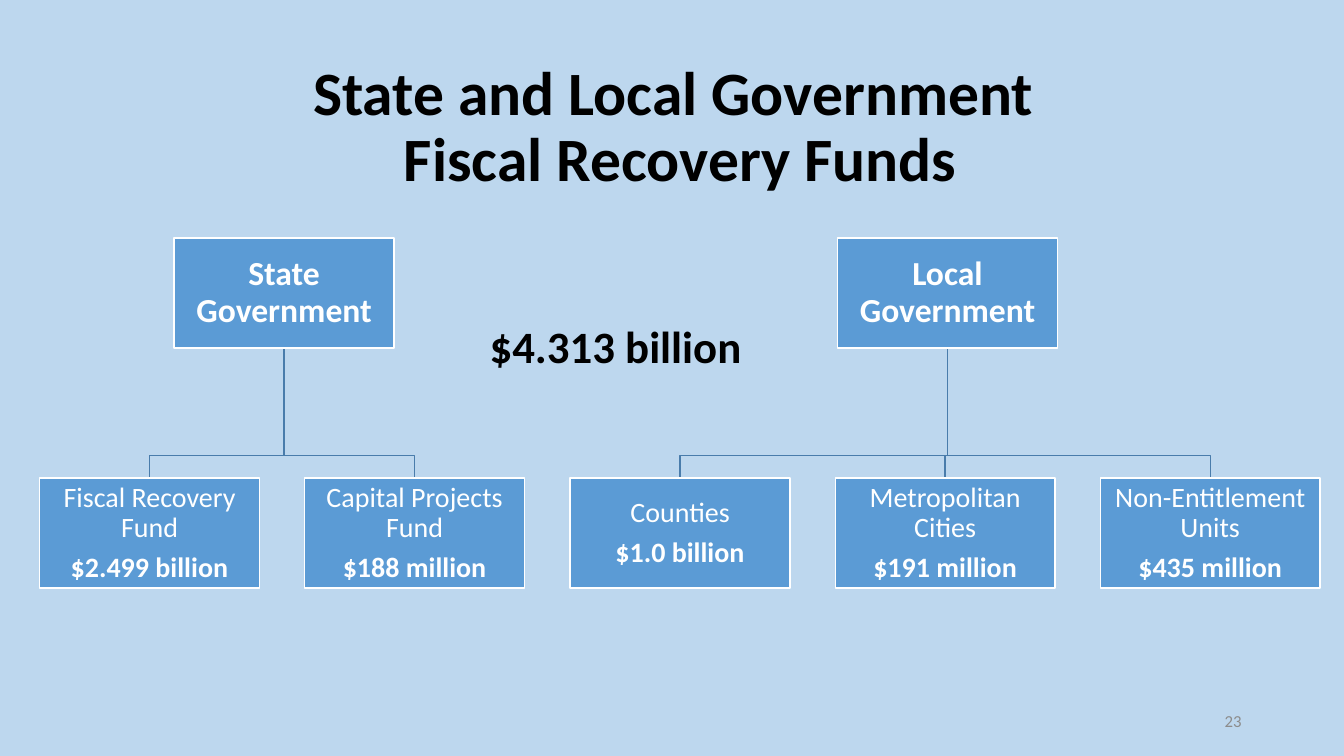
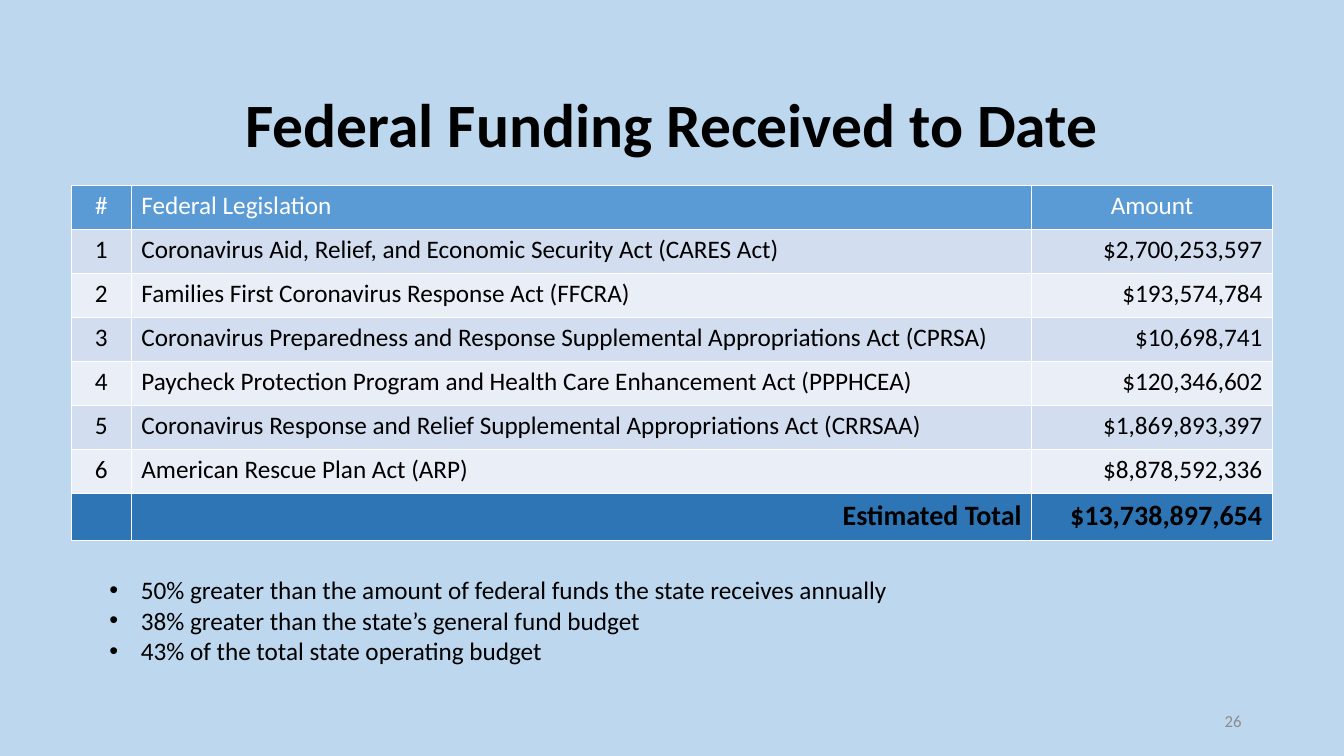
from lxml import etree
from pptx import Presentation
from pptx.dml.color import RGBColor
from pptx.enum.shapes import MSO_SHAPE
from pptx.enum.text import MSO_ANCHOR, PP_ALIGN
from pptx.oxml.ns import qn
from pptx.util import Cm, Pt

LEFT, CENTER, RIGHT = PP_ALIGN.LEFT, PP_ALIGN.CENTER, PP_ALIGN.RIGHT
TOP, MIDDLE = MSO_ANCHOR.TOP, MSO_ANCHOR.MIDDLE
RECT = MSO_SHAPE.RECTANGLE

FONT = "Calibri"
SKY, BLUE, DEEP_BLUE, LINE_BLUE = "BDD7EE", "5B9BD5", "2E75B6", "497CAB"
BAND_DARK, BAND_LIGHT = "D2DEEF", "EAEFF7"
WHITE, BLACK, GREY = "FFFFFF", "000000", "8C8C8C"

SLIDE_W, SLIDE_H = 33.87, 19.05
NUMBER_BOX = (23.92, 17.65, 7.62, 1.02)

# Organisation chart measures, in cm
NODE_W, NODE_H, NODE_PITCH = 5.54, 2.77, 6.68
ROOT_TO_CHILD, ROOT_TO_BUS = 6.05, 5.48

STATE_FUNDS = [
    ("Fiscal Recovery Fund", "$2.499 billion"),
    ("Capital Projects Fund", "$188 million"),
]
LOCAL_FUNDS = [
    ("Counties", "$1.0 billion"),
    ("Metropolitan Cities", "$191 million"),
    ("Non-Entitlement Units", "$435 million"),
]
LEGISLATION = [
    ("Coronavirus Aid, Relief, and Economic Security Act (CARES Act)", "$2,700,253,597"),
    ("Families First Coronavirus Response Act (FFCRA)", "$193,574,784"),
    ("Coronavirus Preparedness and Response Supplemental Appropriations Act (CPRSA)",
     "$10,698,741"),
    ("Paycheck Protection Program and Health Care Enhancement Act (PPPHCEA)",
     "$120,346,602"),
    ("Coronavirus Response and Relief Supplemental Appropriations Act (CRRSAA)",
     "$1,869,893,397"),
    ("American Rescue Plan Act (ARP)", "$8,878,592,336"),
]
FINDINGS = [
    "50% greater than the amount of federal funds the state receives annually",
    "38% greater than the state’s general fund budget",
    "43% of the total state operating budget",
]


def rgb(value):
    return RGBColor.from_string(value)


def cm_box(box):
    return [Cm(v) for v in box]


def set_attrs(obj, formats):
    for name, value in formats.items():
        setattr(obj, name, value)


def write(p, text, size, color=BLACK, bold=False, **formats):
    """Fill a paragraph; formats are paragraph attributes."""
    p.text = text
    set_attrs(p, formats)
    for r in p.runs:
        set_attrs(r.font, {"name": FONT, "size": Pt(size), "bold": bold})
        r.font.color.rgb = rgb(color)


def add_text(slide, box, anchor=TOP):
    tf = slide.shapes.add_textbox(*cm_box(box)).text_frame
    set_attrs(tf, {"word_wrap": True, "vertical_anchor": anchor})
    return tf


def add_title(slide, box, text):
    tf = add_text(slide, box, MIDDLE)
    write(tf.paragraphs[0], text, 44, bold=True, alignment=CENTER, line_spacing=0.9)


def new_slide(prs, number):
    slide = prs.slides.add_slide(prs.slide_layouts[6])
    tf = add_text(slide, NUMBER_BOX, MIDDLE)
    write(tf.paragraphs[0], number, 12, GREY, alignment=RIGHT)
    return slide


def set_outline(sp, color):
    sp.shadow.inherit = False
    sp.line.color.rgb = rgb(color)
    sp.line.width = Pt(1)


def add_node(slide, left, top, lines, size, margin):
    """Draw one chart box; lines are (text, bold) pairs."""
    sp = slide.shapes.add_shape(RECT, *cm_box((left, top, NODE_W, NODE_H)))
    set_outline(sp, WHITE)
    sp.fill.solid()
    sp.fill.fore_color.rgb = rgb(BLUE)
    tf = sp.text_frame
    set_attrs(tf, {"word_wrap": True, "vertical_anchor": MIDDLE})
    set_attrs(tf, {f"margin_{side}": Cm(margin)
                   for side in ("left", "top", "right", "bottom")})
    for i, (text, bold) in enumerate(lines):
        p = tf.add_paragraph() if i else tf.paragraphs[0]
        write(p, text, size, WHITE, bold, alignment=CENTER, line_spacing=0.9,
              space_before=Pt(7 if i else 0))


def add_elbow(slide, points):
    """Draw an open angular line through points given in cm."""
    start, *rest = [cm_box(point) for point in points]
    builder = slide.shapes.build_freeform(*start)
    builder.add_line_segments(rest, close=False)
    sp = builder.convert_to_shape()
    sp.fill.background()
    set_outline(sp, LINE_BLUE)


def add_branch(slide, left, top, root_x, heading, funds):
    """Draw a heading centred on root_x above its row of funds, with joining lines."""
    bus, child_top = top + ROOT_TO_BUS, top + ROOT_TO_CHILD
    lefts = [left + i * NODE_PITCH for i in range(len(funds))]
    for x in lefts:
        child_x = x + NODE_W / 2
        add_elbow(slide, [(root_x, top + NODE_H), (root_x, bus),
                          (child_x, bus), (child_x, child_top)])
    add_node(slide, root_x - NODE_W / 2, top, [(heading, True)], 24, 0.05)
    for x, (name, amount) in zip(lefts, funds):
        add_node(slide, x, child_top, [(name, False), (amount, True)], 20, 0.03)


def set_borders(cell, color, width):
    tc_pr = cell._tc.get_or_add_tcPr()
    for i, side in enumerate(("lnL", "lnR", "lnT", "lnB")):
        ln = etree.Element(qn(f"a:{side}"), w=str(Pt(width)))
        fill = etree.SubElement(ln, qn("a:solidFill"))
        etree.SubElement(fill, qn("a:srgbClr"), val=color)
        tc_pr.insert(i, ln)


def fill_row(table, row, texts, aligns, fill, size=18, color=BLACK, bold=False):
    for col, (text, align) in enumerate(zip(texts, aligns)):
        cell = table.cell(row, col)
        cell.fill.solid()
        cell.fill.fore_color.rgb = rgb(fill)
        set_borders(cell, WHITE, 1)
        write(cell.text_frame.paragraphs[0], text, size, color, bold, alignment=align)


def add_funding_table(slide, left, top):
    widths, row_h, total_h = (1.51, 22.69, 6.07), 1.11, 1.18
    total = len(LEGISLATION) + 1
    box = (left, top, sum(widths), row_h * total + total_h)
    table = slide.shapes.add_table(total + 1, len(widths), *cm_box(box)).table
    set_attrs(table, {"first_row": False, "horz_banding": False})
    for column, width in zip(table.columns, widths):
        column.width = Cm(width)
    for i, row in enumerate(table.rows):
        row.height = Cm(total_h if i == total else row_h)

    fill_row(table, 0, ("#", "Federal Legislation", "Amount"),
             (CENTER, LEFT, CENTER), BLUE, color=WHITE)
    for i, (act, amount) in enumerate(LEGISLATION, 1):
        fill_row(table, i, (str(i), act, amount), (CENTER, LEFT, RIGHT),
                 BAND_DARK if i % 2 else BAND_LIGHT)
    fill_row(table, total, ("", "Estimated Total", "$13,738,897,654"),
             (CENTER, RIGHT, RIGHT), DEEP_BLUE, 20, bold=True)


def add_bullets(slide, box, items):
    tf = add_text(slide, box)
    indent = Cm(0.79)
    for i, text in enumerate(items):
        p = tf.add_paragraph() if i else tf.paragraphs[0]
        p_pr = p._p.get_or_add_pPr()
        p_pr.set("marL", str(indent))
        p_pr.set("indent", str(-indent))
        etree.SubElement(p_pr, qn("a:buFont"), typeface="Arial")
        etree.SubElement(p_pr, qn("a:buChar"), char="•")
        write(p, text, 18)


def build_recovery_funds(prs):
    slide = new_slide(prs, "23")
    add_title(slide, (4.08, 1.3, 26.14, 3.89),
              "State and Local Government \vFiscal Recovery Funds")
    add_branch(slide, 1.0, 6.0, 7.16, "State Government", STATE_FUNDS)
    add_branch(slide, 14.37, 6.0, 23.88, "Local Government", LOCAL_FUNDS)
    tf = add_text(slide, (11.68, 7.9, 7.67, 1.63))
    write(tf.paragraphs[0], "$4.313 billion", 32, bold=True, alignment=CENTER)


def build_funding_received(prs):
    slide = new_slide(prs, "26")
    add_title(slide, (1.8, 1.27, 30.28, 3.89), "Federal Funding Received to Date")
    add_funding_table(slide, 1.8, 4.67)
    add_bullets(slide, (2.51, 14.36, 23.9, 2.57), FINDINGS)


def main():
    prs = Presentation()
    set_attrs(prs, {"slide_width": Cm(SLIDE_W), "slide_height": Cm(SLIDE_H)})
    background = prs.slide_master.background.fill
    background.solid()
    background.fore_color.rgb = rgb(SKY)
    build_recovery_funds(prs)
    build_funding_received(prs)
    prs.save("out.pptx")


if __name__ == "__main__":
    main()
